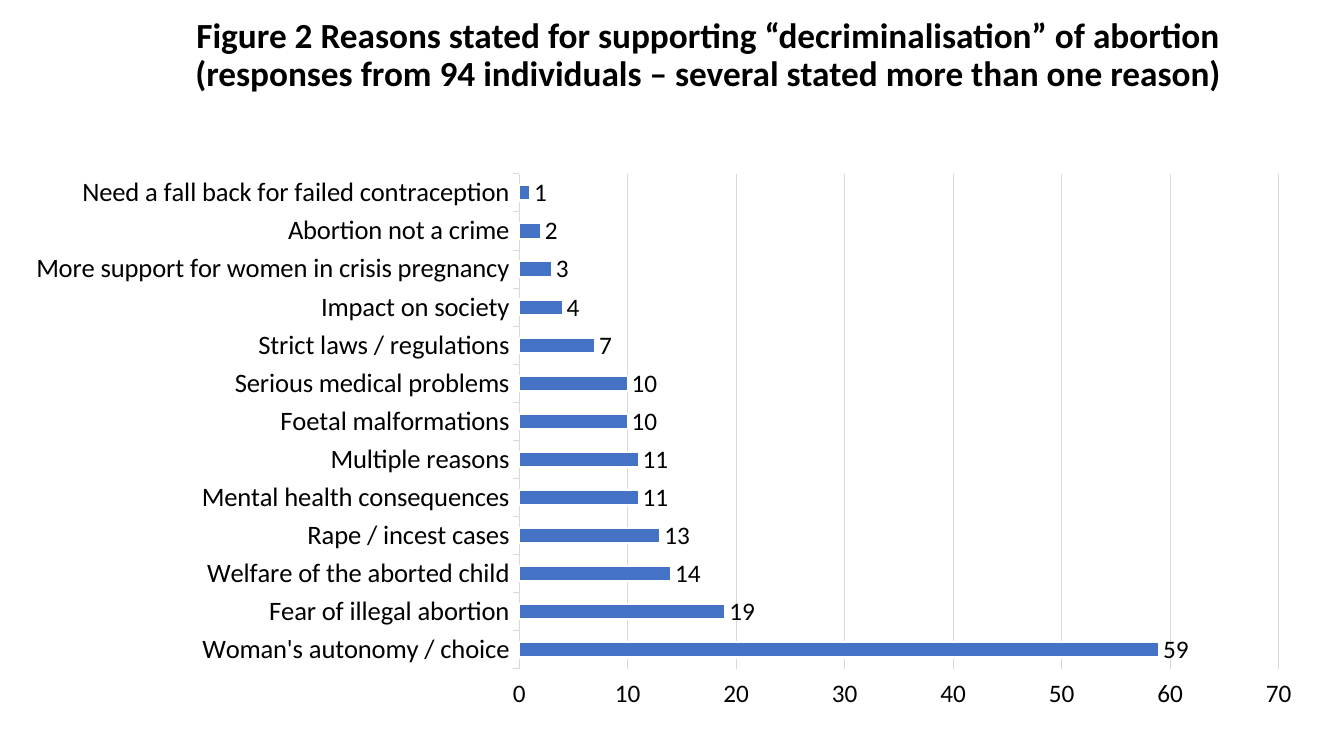
from dataclasses import dataclass

from lxml import etree
from pptx import Presentation
from pptx.chart.data import CategoryChartData
from pptx.dml.color import RGBColor
from pptx.enum.chart import XL_CHART_TYPE, XL_LABEL_POSITION, XL_TICK_MARK
from pptx.enum.text import MSO_ANCHOR, MSO_AUTO_SIZE, PP_ALIGN
from pptx.oxml.ns import qn
from pptx.util import Pt

BAR_CLUSTERED = XL_CHART_TYPE.BAR_CLUSTERED
OUTSIDE_END = XL_LABEL_POSITION.OUTSIDE_END
TICK_OUTSIDE = XL_TICK_MARK.OUTSIDE
TICK_NONE = XL_TICK_MARK.NONE
MIDDLE = MSO_ANCHOR.MIDDLE
NO_AUTOFIT = MSO_AUTO_SIZE.NONE
CENTER = PP_ALIGN.CENTER

FONT = "Calibri"
TITLE_ONLY = 5
COLORS = {"text": "000000", "bar": "4472C4", "edge": "FFFFFF", "grid": "D9D9D9"}
PLOT_AREA = {"x": 0.383, "y": 0.107, "w": 0.597, "h": 0.801}
TITLE_LINES = (
    "Figure 2 Reasons stated for supporting “decriminalisation” of abortion",
    "(responses from 94 individuals – several stated more than one reason)",
)


@dataclass(frozen=True)
class Reason:
    label: str
    responses: int


# Listed from the bottom bar to the top bar
REASONS = (
    Reason("Woman's autonomy / choice", 59),
    Reason("Fear of illegal abortion", 19),
    Reason("Welfare of the aborted child", 14),
    Reason("Rape / incest cases", 13),
    Reason("Mental health consequences", 11),
    Reason("Multiple reasons", 11),
    Reason("Foetal malformations", 10),
    Reason("Serious medical problems", 10),
    Reason("Strict laws / regulations", 7),
    Reason("Impact on society", 4),
    Reason("More support for women in crisis pregnancy", 3),
    Reason("Abortion not a crime", 2),
    Reason("Need a fall back for failed contraception", 1),
)


def color(name: str) -> RGBColor:
    return RGBColor.from_string(COLORS[name])


def style_font(font, size: float, bold: bool = False) -> None:
    font.name = FONT
    font.size = Pt(size)
    font.bold = bold
    font.color.rgb = color("text")


def style_line(line, name: str, width: float) -> None:
    line.color.rgb = color(name)
    line.width = Pt(width)


def write_title(title) -> None:
    title.left, title.top, title.width, title.height = Pt(31), Pt(8), Pt(882), Pt(63.5)
    frame = title.text_frame
    frame.word_wrap = True
    frame.auto_size = NO_AUTOFIT
    frame.vertical_anchor = MIDDLE
    frame.margin_left, frame.margin_right = Pt(75), Pt(7)
    frame.margin_top = frame.margin_bottom = Pt(3.6)
    heading = frame.paragraphs[0]
    heading.alignment = CENTER
    heading.line_spacing = 0.9
    for index, line in enumerate(TITLE_LINES):
        if index:
            heading.add_line_break()
        run = heading.add_run()
        run.text = line
        style_font(run.font, 25.2, bold=True)


def place_plot_area(chart) -> None:
    """Fix the inner plot area as fractions of the chart."""
    plot_area = chart.element.find(f".//{qn('c:plotArea')}")
    layout = plot_area.find(qn("c:layout"))
    if layout is None:
        layout = etree.Element(qn("c:layout"))
        plot_area.insert(0, layout)
    manual = etree.SubElement(layout, qn("c:manualLayout"))
    settings = {"layoutTarget": "inner", "xMode": "edge", "yMode": "edge", **PLOT_AREA}
    for tag, value in settings.items():
        etree.SubElement(manual, qn(f"c:{tag}")).set("val", str(value))


def draw_reasons_chart(slide) -> None:
    data = CategoryChartData()
    data.categories = [reason.label for reason in REASONS]
    data.add_series("Series 1", [reason.responses for reason in REASONS])
    chart = slide.shapes.add_chart(
        BAR_CLUSTERED, Pt(23), Pt(77), Pt(908.5), Pt(441.5), data
    ).chart
    chart.has_title = False
    chart.has_legend = False
    style_font(chart.font, 18)
    place_plot_area(chart)

    # Bars and their values
    plot = chart.plots[0]
    plot.gap_width = 150
    plot.vary_by_categories = False
    bars = plot.series[0]
    bars.format.fill.solid()
    bars.format.fill.fore_color.rgb = color("bar")
    style_line(bars.format.line, "edge", 1.5)
    labels = bars.data_labels
    labels.show_value = True
    labels.position = OUTSIDE_END
    style_font(labels.font, 18)

    # Reasons axis
    reasons_axis = chart.category_axis
    reasons_axis.has_major_gridlines = False
    reasons_axis.major_tick_mark = TICK_OUTSIDE
    reasons_axis.minor_tick_mark = TICK_NONE
    style_line(reasons_axis.format.line, "grid", 0.75)
    style_font(reasons_axis.tick_labels.font, 19)

    # Responses axis
    responses_axis = chart.value_axis
    responses_axis.minimum_scale = 0
    responses_axis.maximum_scale = 70
    responses_axis.major_unit = 10
    responses_axis.major_tick_mark = TICK_OUTSIDE
    responses_axis.minor_tick_mark = TICK_NONE
    responses_axis.format.line.fill.background()
    responses_axis.has_major_gridlines = True
    style_line(responses_axis.major_gridlines.format.line, "grid", 0.75)
    style_font(responses_axis.tick_labels.font, 18)


def main() -> None:
    deck = Presentation()
    deck.slide_width, deck.slide_height = Pt(960), Pt(540)
    slide = deck.slides.add_slide(deck.slide_layouts[TITLE_ONLY])
    write_title(slide.shapes.title)
    draw_reasons_chart(slide)
    deck.save("out.pptx")


if __name__ == "__main__":
    main()
